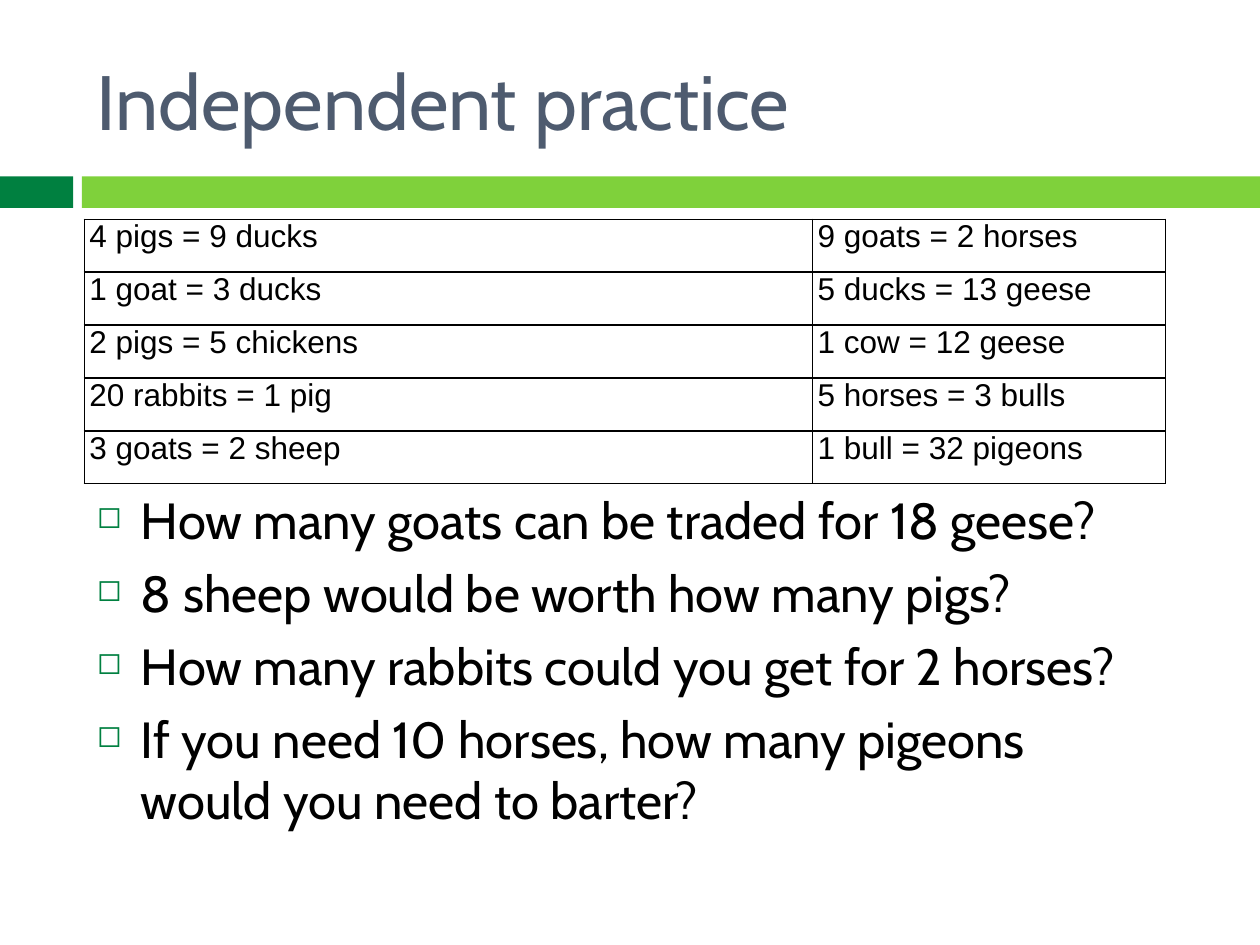
import dataclasses

import lxml.etree
import pptx
import pptx.dml.color
import pptx.enum.shapes
import pptx.enum.text
import pptx.oxml.ns
import pptx.util

WIDTH, HEIGHT = 10, 7.5
MARGIN = 0.67
CONTENT_WIDTH = 8.58
COLUMN_WIDTHS = (5.78, 2.8)
ROW_HEIGHT = 0.42

TRADES = [
    ("4 pigs = 9 ducks", "9 goats = 2 horses"),
    ("1 goat = 3 ducks", "5 ducks = 13 geese"),
    ("2 pigs = 5 chickens", "1 cow = 12 geese"),
    ("20 rabbits = 1 pig", "5 horses = 3 bulls"),
    ("3 goats = 2 sheep", "1 bull = 32 pigeons"),
]
QUESTIONS = [
    "How many goats can be traded for 18 geese?",
    "8 sheep would be worth how many pigs?",
    "How many rabbits could you get for 2 horses?",
    "If you need 10 horses, how many pigeons would you need to barter?",
]


@dataclasses.dataclass(frozen=True)
class Theme:
    font: str = "Cabin"
    table_font: str = "Arial"
    title_size: int = 44
    body_size: int = 29
    table_size: int = 18
    title: str = "4E5B6F"
    text: str = "000000"
    dark_green: str = "008040"
    light_green: str = "7FD13B"


THEME = Theme()


def inches(*lengths):
    return [pptx.util.Inches(length) for length in lengths]


def color(value):
    return pptx.dml.color.RGBColor.from_string(value)


def add_element(parent, tag, **attributes):
    element = lxml.etree.SubElement(parent, pptx.oxml.ns.qn(tag))
    for name, value in attributes.items():
        element.set(name, value)
    return element


def add_run(paragraph, text, font, size, text_color):
    run = paragraph.add_run()
    run.text = text
    run.font.name = font
    run.font.size = pptx.util.Pt(size)
    run.font.color.rgb = color(text_color)


def add_bar(slide, left, width, fill):
    shape = slide.shapes.add_shape(
        pptx.enum.shapes.MSO_SHAPE.RECTANGLE, *inches(left, 1.4, width, 0.25))
    shape.shadow.inherit = False
    shape.fill.solid()
    shape.fill.fore_color.rgb = color(fill)
    shape.line.fill.background()


def add_text_frame(slide, left, top, width, height):
    frame = slide.shapes.add_textbox(*inches(left, top, width, height)).text_frame
    frame.word_wrap = True
    return frame


def add_title(slide, text):
    frame = add_text_frame(slide, MARGIN, 0.25, 8.92, 1.08)
    frame.vertical_anchor = pptx.enum.text.MSO_ANCHOR.MIDDLE
    add_run(frame.paragraphs[0], text, THEME.font, THEME.title_size, THEME.title)


def add_borders(cell):
    properties = cell._tc.get_or_add_tcPr()
    for side in ("L", "R", "T", "B"):
        line = add_element(properties, f"a:ln{side}", w=str(pptx.util.Pt(1)))
        fill = add_element(line, "a:solidFill")
        add_element(fill, "a:srgbClr", val=THEME.text)


def add_trade_table(slide, rows):
    table = slide.shapes.add_table(
        len(rows), len(COLUMN_WIDTHS),
        *inches(MARGIN, 1.74, CONTENT_WIDTH, ROW_HEIGHT * len(rows))).table
    table.first_row = table.horz_banding = False
    for column, width in zip(table.columns, COLUMN_WIDTHS):
        column.width = pptx.util.Inches(width)
    for row, texts in zip(table.rows, rows):
        row.height = pptx.util.Inches(ROW_HEIGHT)
        for cell, text in zip(row.cells, texts):
            cell.margin_left = cell.margin_right = pptx.util.Inches(0.04)
            cell.margin_top = cell.margin_bottom = 0
            # Borders come before the fill in the cell properties
            add_borders(cell)
            cell.fill.background()
            add_run(cell.text_frame.paragraphs[0], text,
                    THEME.table_font, THEME.table_size, THEME.text)


def add_bullet(paragraph):
    properties = paragraph._p.get_or_add_pPr()
    indent = pptx.util.Inches(0.35)
    properties.set("marL", str(indent))
    properties.set("indent", str(-indent))
    bullet_color = add_element(properties, "a:buClr")
    add_element(bullet_color, "a:srgbClr", val=THEME.dark_green)
    add_element(properties, "a:buSzPct", val="60000")
    add_element(properties, "a:buChar", char="◻")


def add_questions(slide, questions):
    frame = add_text_frame(slide, MARGIN, 3.83, CONTENT_WIDTH, 2.83)
    for index, question in enumerate(questions):
        paragraph = frame.add_paragraph() if index else frame.paragraphs[0]
        paragraph.space_before = pptx.util.Pt(7)
        add_bullet(paragraph)
        add_run(paragraph, question, THEME.font, THEME.body_size, THEME.text)


def main():
    presentation = pptx.Presentation()
    presentation.slide_width, presentation.slide_height = inches(WIDTH, HEIGHT)
    slide = presentation.slides.add_slide(presentation.slide_layouts[6])

    # Divider band
    add_bar(slide, 0, 0.58, THEME.dark_green)
    add_bar(slide, 0.65, WIDTH - 0.65, THEME.light_green)

    # Title, exchange rates and questions
    add_title(slide, "Independent practice")
    add_trade_table(slide, TRADES)
    add_questions(slide, QUESTIONS)

    presentation.save("out.pptx")


if __name__ == "__main__":
    main()
